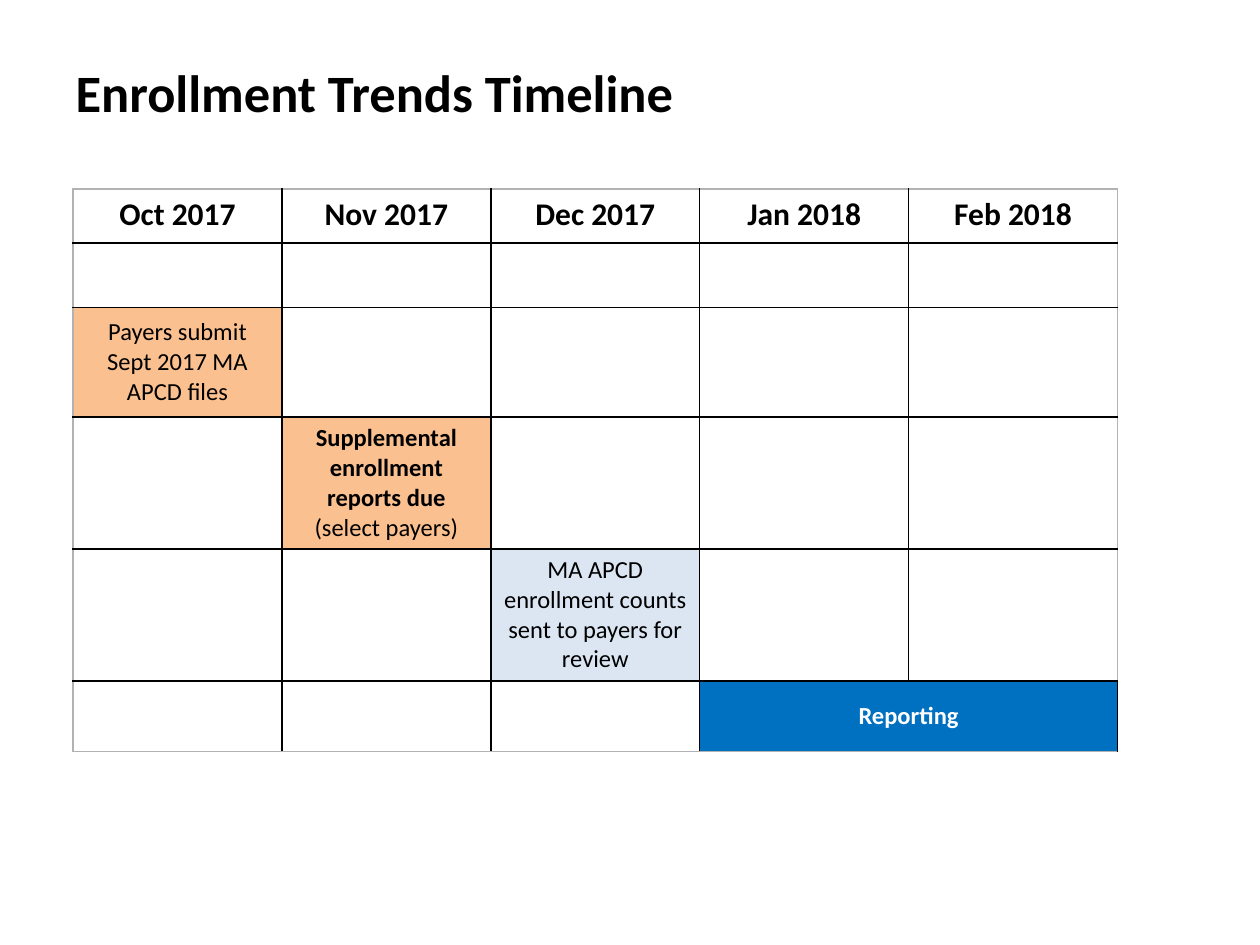
import dataclasses

import pptx
import pptx.dml.color
import pptx.enum.text
import pptx.oxml.ns
import pptx.util
from lxml import etree


@dataclasses.dataclass(frozen=True)
class Theme:
    font: str = "Calibri"
    title_size: int = 30
    head_size: int = 18
    body_size: int = 14
    black: str = "000000"
    white: str = "FFFFFF"
    outline: str = "B2B2B2"
    submission: str = "FAC090"
    review: str = "DCE6F2"
    reporting: str = "0070C0"


THEME = Theme()
MONTHS = ["Oct 2017", "Nov 2017", "Dec 2017", "Jan 2018", "Feb 2018"]
ROW_HEIGHTS = [0.43, 0.51, 0.87, 1.03, 1.04, 0.56]
STEPS = [
    (2, 0, 1, THEME.submission, THEME.black,
     [("Payers submit Sept 2017 MA APCD files", False)]),
    (3, 1, 1, THEME.submission, THEME.black,
     [("Supplemental enrollment reports due ", True), ("(select payers)", False)]),
    (4, 2, 1, THEME.review, THEME.black,
     [("MA APCD enrollment counts sent to payers for review", False)]),
    (5, 3, 2, THEME.reporting, THEME.white, [("Reporting", True)]),
]


def rgb(color):
    return pptx.dml.color.RGBColor.from_string(color)


def add_run(p, text, size, color, bold):
    r = p.add_run()
    r.text = text
    r.font.name = THEME.font
    r.font.size = pptx.util.Pt(size)
    r.font.bold = bold
    r.font.color.rgb = rgb(color)


def set_border(cell, side, color):
    tag = pptx.oxml.ns.qn
    ln = etree.Element(tag(f"a:ln{side}"), w=str(pptx.util.Pt(1)))
    fill = etree.SubElement(ln, tag("a:solidFill"))
    etree.SubElement(fill, tag("a:srgbClr"), val=color)
    cell._tc.get_or_add_tcPr().insert("LRTB".index(side), ln)


def write_cell(cell, runs, size, color):
    p = cell.text_frame.paragraphs[0]
    p.alignment = pptx.enum.text.PP_ALIGN.CENTER
    for text, bold in runs:
        add_run(p, text, size, color, bold)


def place_title(s, left, top, width, height):
    sp = s.shapes.title
    sp.left, sp.top, sp.width, sp.height = left, top, width, height
    tf = sp.text_frame
    tf.word_wrap = True
    tf.vertical_anchor = pptx.enum.text.MSO_ANCHOR.MIDDLE
    p = tf.paragraphs[0]
    p.alignment = pptx.enum.text.PP_ALIGN.LEFT
    add_run(p, "Enrollment Trends Timeline", THEME.title_size, THEME.black, True)


def style_grid(table):
    rows, cols = len(table.rows), len(table.columns)
    for row in range(rows):
        for col in range(cols):
            cell = table.cell(row, col)
            cell.fill.background()
            outer = {"L": col == 0, "R": col == cols - 1,
                     "T": row == 0, "B": row == rows - 1}
            for side, on_edge in outer.items():
                set_border(cell, side, THEME.outline if on_edge else THEME.black)


def place_timeline(s, left, top, width, height):
    table = s.shapes.add_table(
        len(ROW_HEIGHTS), len(MONTHS), left, top, width, height).table
    table.first_row = table.horz_banding = False
    for row, share in zip(table.rows, ROW_HEIGHTS):
        row.height = int(height * share / sum(ROW_HEIGHTS))
    style_grid(table)
    for col, month in enumerate(MONTHS):
        write_cell(table.cell(0, col), [(month, True)], THEME.head_size, THEME.black)
    for row, col, span, fill, color, runs in STEPS:
        cell = table.cell(row, col)
        if span > 1:
            cell.merge(table.cell(row, col + span - 1))
        cell.fill.solid()
        cell.fill.fore_color.rgb = rgb(fill)
        cell.vertical_anchor = pptx.enum.text.MSO_ANCHOR.MIDDLE
        write_cell(cell, runs, THEME.body_size, color)


def main():
    prs = pptx.Presentation()
    prs.slide_width = pptx.util.Inches(10)
    prs.slide_height = pptx.util.Inches(7.5)
    s = prs.slides.add_slide(prs.slide_layouts[5])
    inch = pptx.util.Inches
    place_title(s, inch(0.5), inch(0.42), inch(8.5), inch(0.61))
    place_timeline(s, inch(0.58), inch(1.5), inch(8.29), inch(sum(ROW_HEIGHTS)))
    prs.save("out.pptx")


if __name__ == "__main__":
    main()
